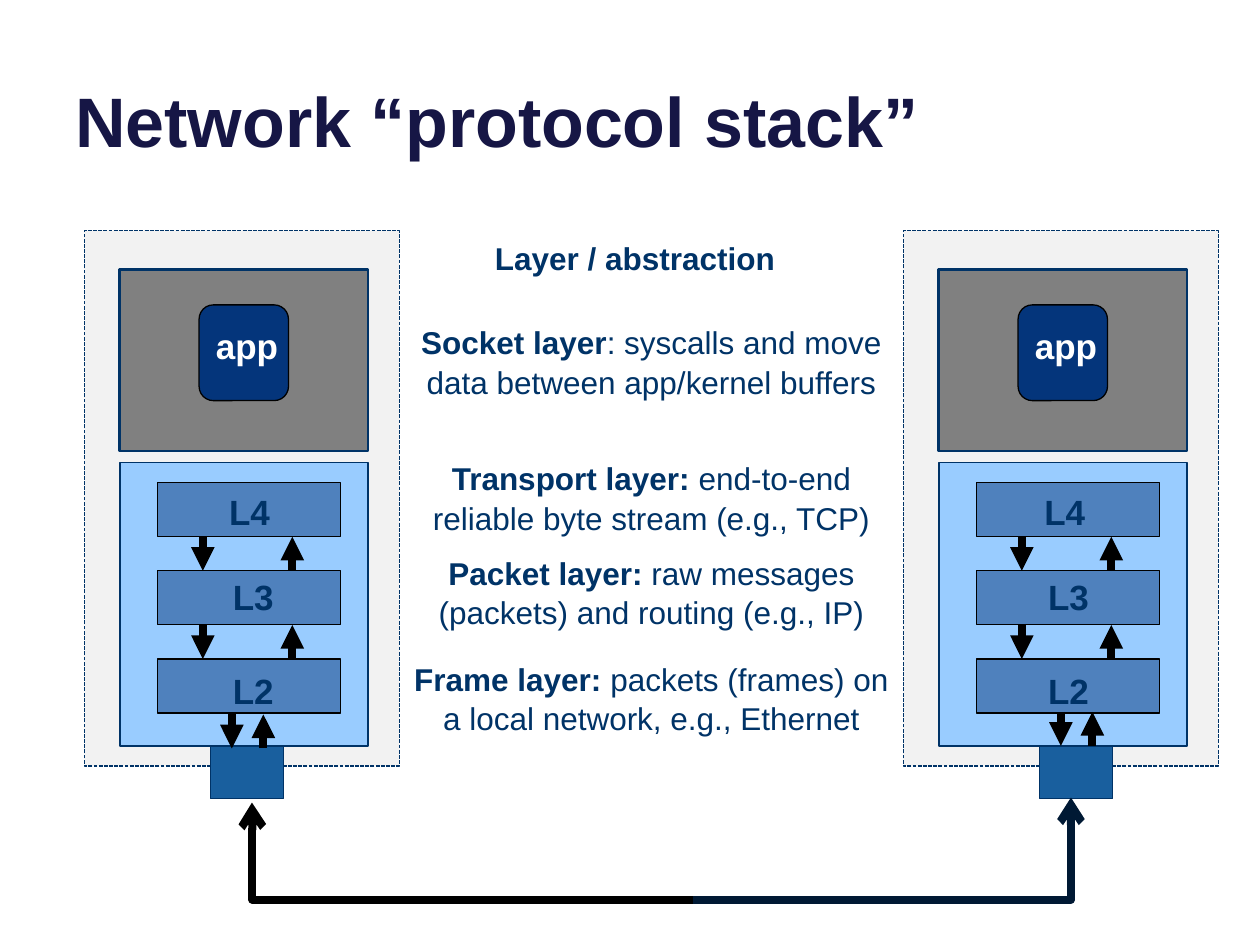
import dataclasses

import pptx
import pptx.dml.color
import pptx.enum.dml
import pptx.enum.shapes
import pptx.enum.text
import pptx.oxml
import pptx.oxml.ns
import pptx.util

Inches = pptx.util.Inches
SHAPE = pptx.enum.shapes.MSO_SHAPE
CONNECTOR = pptx.enum.shapes.MSO_CONNECTOR
ANCHOR = pptx.enum.text.MSO_ANCHOR
ALIGN = pptx.enum.text.PP_ALIGN


@dataclasses.dataclass(frozen=True)
class Theme:
    """Colours, font and type sizes of the slide."""

    font: str = "Arial"
    title: str = "161645"
    navy: str = "003367"
    black: str = "000000"
    white: str = "FFFFFF"
    host: str = "F2F2F2"
    user_space: str = "808080"
    app: str = "04357B"
    kernel: str = "99CCFF"
    layer: str = "4F81BD"
    card: str = "195F9E"
    cable: str = "001934"
    title_size: int = 40
    label_size: int = 20
    body_size: int = 18
    arrow_width: float = 4.5


class SlideBuilder:
    """Draws styled elements on the current slide."""

    def __init__(self, page, theme):
        self.page = page
        self.theme = theme

    def color(self, value):
        return pptx.dml.color.RGBColor.from_string(value)

    def box(self, frame, fill, line, width=0.75, kind=SHAPE.RECTANGLE, dash=None):
        box = self.page.shapes.add_shape(kind, *map(Inches, frame))
        box.shadow.inherit = False
        box.fill.solid()
        box.fill.fore_color.rgb = self.color(fill)
        box.line.color.rgb = self.color(line)
        for name, value in {"width": pptx.util.Pt(width), "dash_style": dash}.items():
            setattr(box.line, name, value)
        return box

    def text(self, frame, runs, size, color, align=ALIGN.LEFT, anchor=ANCHOR.TOP,
             wrap=True, spacing=1.05):
        box = self.page.shapes.add_textbox(*map(Inches, frame))
        layout = {"word_wrap": wrap, "vertical_anchor": anchor}
        for name, value in layout.items():
            setattr(box.text_frame, name, value)
        para = box.text_frame.paragraphs[0]
        for name, value in {"alignment": align, "line_spacing": spacing}.items():
            setattr(para, name, value)
        for words, bold in runs:
            span = para.add_run()
            span.text = words
            span.font.color.rgb = self.color(color)
            style = {"name": self.theme.font, "size": pptx.util.Pt(size), "bold": bold}
            for name, value in style.items():
                setattr(span.font, name, value)

    def arrow(self, start, end, color, kind=CONNECTOR.STRAIGHT, bend=None,
              end_tag="tailEnd", head="triangle"):
        arrow = self.page.shapes.add_connector(kind, *map(Inches, start + end))
        arrow.line.color.rgb = self.color(color)
        arrow.line.width = pptx.util.Pt(self.theme.arrow_width)
        namespace = pptx.oxml.ns.nsdecls("a")
        properties = arrow._element.spPr
        outline = properties.find(pptx.oxml.ns.qn("a:ln"))
        outline.append(pptx.oxml.parse_xml(f'<a:{end_tag} {namespace} type="{head}"/>'))
        properties.append(pptx.oxml.parse_xml(f"<a:effectLst {namespace}/>"))
        if bend is not None:
            guides = properties.find(".//" + pptx.oxml.ns.qn("a:avLst"))
            guides.append(pptx.oxml.parse_xml(
                f'<a:gd {namespace} name="adj1" fmla="val {bend}"/>'))

    def host(self, left, label_left, card_left, card_arrow_top):
        theme = self.theme
        self.box((left, 1.83, 2.5, 4.25), theme.host, theme.navy,
                 dash=pptx.enum.dml.MSO_LINE.SQUARE_DOT)
        self.box((left + 0.28, 2.14, 1.97, 1.44), theme.user_space, theme.navy, 1.5)
        app = self.box((left + 0.91, 2.42, 0.71, 0.76), theme.app, theme.black,
                       kind=SHAPE.ROUNDED_RECTANGLE)
        app.adjustments[0] = 0.16
        self.text((left + 0.58, 2.51, 1.42, 0.74), [("app", True)],
                  theme.label_size, theme.white, ALIGN.CENTER)
        self.box((left + 0.28, 3.67, 1.97, 2.25), theme.kernel, theme.navy, 1,
                 SHAPE.FLOWCHART_PROCESS)

        layers = [("L4", 0, 3.83), ("L3", 0.03, 4.5), ("L2", 0.03, 5.25)]
        for index, (name, shift, label_top) in enumerate(layers):
            top = 3.83 + 0.7 * index
            self.box((left + 0.58, top, 1.45, 0.43), theme.layer, theme.black)
            self.text((label_left + shift, label_top, 0.53, 0.44), [(name, True)],
                      theme.label_size, theme.navy, wrap=False)
        for top in (4.26, 4.96):
            self.arrow_pair(left + 0.94, left + 1.65, top)

        self.box((card_left, 5.92, 0.58, 0.42), theme.card, theme.navy)
        self.arrow_pair(card_left + 0.17, card_left + 0.42, card_arrow_top)

    def arrow_pair(self, down, up, top):
        bottom = top + 0.27
        self.arrow((down, top), (down, bottom), self.theme.black)
        self.arrow((up, bottom), (up, top), self.theme.black)


def main():
    theme = Theme()
    deck = pptx.Presentation()
    deck.slide_width, deck.slide_height = Inches(10), Inches(7.5)
    builder = SlideBuilder(deck.slides.add_slide(deck.slide_layouts[6]), theme)

    builder.text((0.5, -0.37, 9, 1.7), [("Network “protocol stack”", True)],
                 theme.title_size, theme.title, anchor=ANCHOR.BOTTOM, spacing=1)
    builder.host(0.67, 1.72, 1.67, 5.67)
    builder.host(7.17, 8.19, 8.25, 5.65)

    builder.arrow((2, 6.37), (5.56, 7.14), theme.black, CONNECTOR.ELBOW, 100,
                  "headEnd", "arrow")
    builder.arrow((5.5, 7.14), (8.5, 6.33), theme.cable, CONNECTOR.ELBOW, 100000,
                  head="arrow")

    builder.text((3.83, 1.83, 4, 0.4), [("Layer / abstraction", True)],
                 theme.body_size, theme.navy)
    descriptions = [
        (2.5, "Socket layer", ": syscalls and move data between app/kernel buffers"),
        (3.58, "Transport layer: ", "end-to-end reliable byte stream (e.g., TCP)"),
        (4.33, "Packet layer: ", "raw messages (packets) and routing (e.g., IP)"),
        (5.17, "Frame layer: ", "packets (frames) on a local network, e.g., Ethernet"),
    ]
    for top, name, detail in descriptions:
        builder.text((3.17, top, 4, 0.71), [(name, True), (detail, False)],
                     theme.body_size, theme.navy, ALIGN.CENTER)
    deck.save("out.pptx")


if __name__ == "__main__":
    main()
